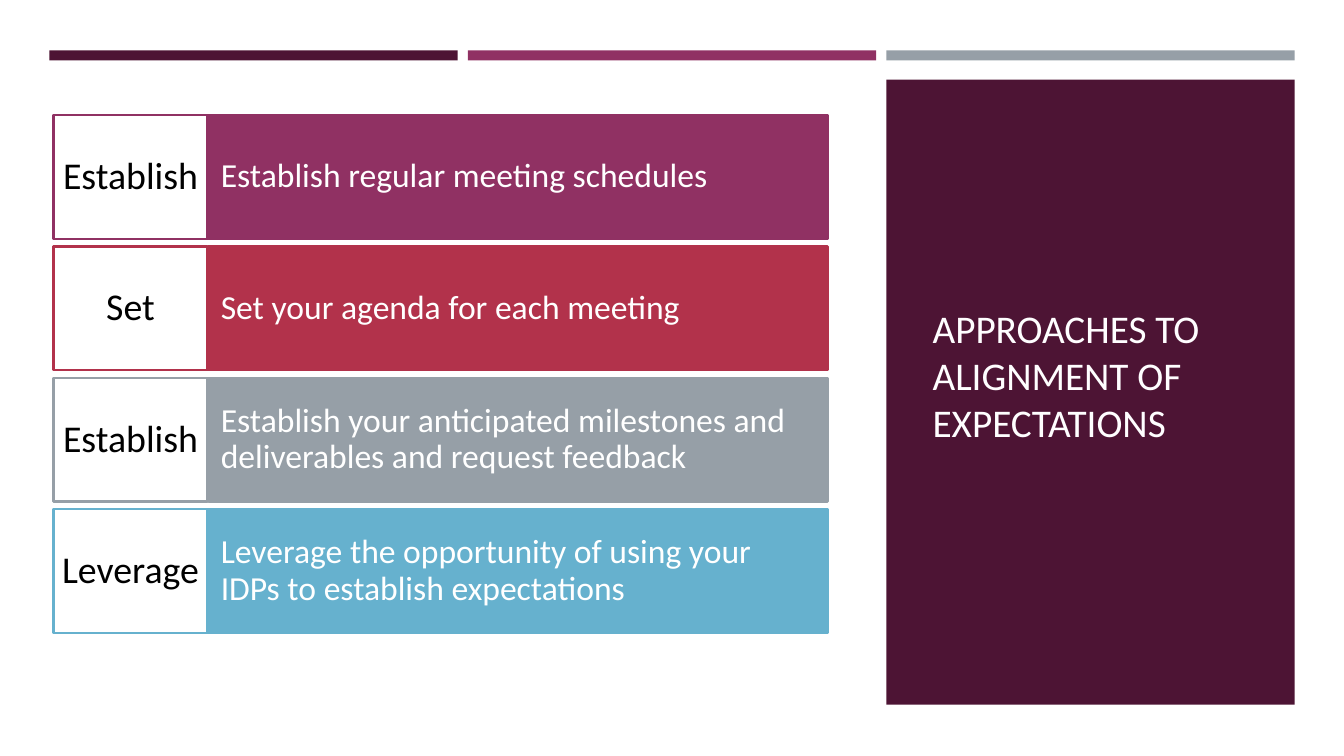
import pptx
import pptx.dml.color
import pptx.enum.shapes
import pptx.enum.text
import pptx.util

RGBColor = pptx.dml.color.RGBColor
PP_ALIGN = pptx.enum.text.PP_ALIGN
MSO_ANCHOR = pptx.enum.text.MSO_ANCHOR

PX = 9144  # EMU per px, 100 px to the inch

PLUM = RGBColor(0x4D, 0x14, 0x34)
MAGENTA = RGBColor(0x90, 0x31, 0x63)
RED = RGBColor(0xB2, 0x32, 0x4B)
GRAY = RGBColor(0x96, 0x9F, 0xA7)
BLUE = RGBColor(0x66, 0xB1, 0xCE)
WHITE = RGBColor(0xFF, 0xFF, 0xFF)
TITLE_WHITE = RGBColor(0xFF, 0xFE, 0xFF)
BLACK = RGBColor(0, 0, 0)

COLUMN_LEFTS = (49, 464, 879)
COLUMN_WIDTH = 405

TITLE = "APPROACHES TO ALIGNMENT OF EXPECTATIONS"
APPROACHES = [
    ("Establish", "Establish regular meeting schedules", MAGENTA),
    ("Set", "Set your agenda for each meeting", RED),
    ("Establish", "Establish your anticipated milestones and deliverables "
                  "and request feedback", GRAY),
    ("Leverage", "Leverage the opportunity of using your IDPs to establish "
                 "expectations", BLUE),
]
ROW_TOP, ROW_HEIGHT, ROW_PITCH = 114, 123, 130.4

LABEL = {"size": 27, "color": BLACK, "align": PP_ALIGN.CENTER,
         "spacing": 0.9, "inset_x": 8, "inset_y": 12}
DETAIL = {"size": 24, "color": WHITE, "align": PP_ALIGN.LEFT,
          "spacing": 0.9, "inset_x": 12, "inset_y": 31}
HEADING = {"size": 28, "color": TITLE_WHITE, "align": PP_ALIGN.LEFT,
           "spacing": 1.0, "inset_x": 10, "inset_y": 5}


def px(n):
    return pptx.util.Emu(round(n * PX))


def set_all(obj, values):
    for name, value in values.items():
        setattr(obj, name, value)


def add_rect(s, left, top, width, height, fill, line=None):
    sp = s.shapes.add_shape(pptx.enum.shapes.MSO_SHAPE.RECTANGLE,
                            px(left), px(top), px(width), px(height))
    sp.shadow.inherit = False
    sp.fill.solid()
    sp.fill.fore_color.rgb = fill
    if line is None:
        sp.line.fill.background()
    else:
        sp.line.color.rgb = line
        sp.line.width = pptx.util.Pt(1.75)
    return sp


def write_text(sp, text, style):
    tf = sp.text_frame
    set_all(tf, {
        "word_wrap": True,
        "auto_size": pptx.enum.text.MSO_AUTO_SIZE.NONE,
        "vertical_anchor": MSO_ANCHOR.MIDDLE,
        "margin_left": px(style["inset_x"]),
        "margin_right": px(style["inset_x"]),
        "margin_top": px(style["inset_y"]),
        "margin_bottom": px(style["inset_y"]),
    })
    p = tf.paragraphs[0]
    set_all(p, {"alignment": style["align"], "line_spacing": style["spacing"]})
    r = p.add_run()
    r.text = text
    set_all(r.font, {"name": "Calibri", "size": pptx.util.Pt(style["size"])})
    r.font.color.rgb = style["color"]


def add_approach(s, top, label, detail, color):
    """Add one row: a coloured detail box with a white label box beside it."""
    write_text(add_rect(s, 207, top, 614, ROW_HEIGHT, color, color),
               detail, DETAIL)
    write_text(add_rect(s, 53, top, 153, ROW_HEIGHT, WHITE, color),
               label, LABEL)


def add_title_panel(s):
    panel = add_rect(s, COLUMN_LEFTS[2], 79, COLUMN_WIDTH, 620, PLUM)
    title = s.shapes.title
    set_all(title, {"left": px(915), "top": px(114),
                    "width": px(334), "height": px(515)})
    write_text(title, TITLE, HEADING)
    panel.element.addnext(title.element)


def main():
    prs = pptx.Presentation()
    set_all(prs, {"slide_width": px(1333), "slide_height": px(750)})
    s = prs.slides.add_slide(prs.slide_layouts[5])
    for left, color in zip(COLUMN_LEFTS, (PLUM, MAGENTA, GRAY)):
        add_rect(s, left, 50, COLUMN_WIDTH, 10, color)
    add_title_panel(s)
    for i, (label, detail, color) in enumerate(APPROACHES):
        add_approach(s, ROW_TOP + i * ROW_PITCH, label, detail, color)
    prs.save("out.pptx")


if __name__ == "__main__":
    main()
